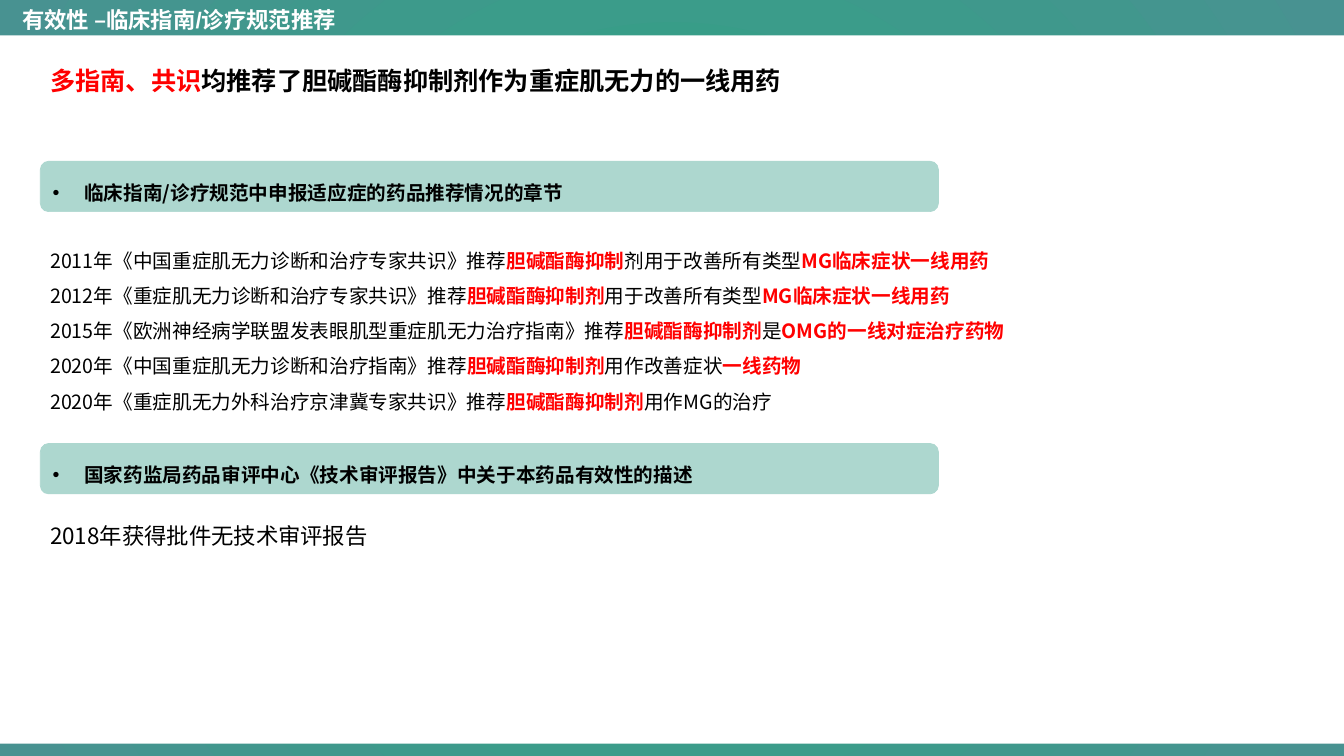
"""Builds the slide on guideline recommendations for cholinesterase inhibitors."""
from dataclasses import dataclass

from lxml import etree
from pptx import Presentation
from pptx.dml.color import RGBColor
from pptx.enum import shapes, text
from pptx.oxml import ns, parse_xml
from pptx.util import Pt

BLACK = RGBColor(0, 0, 0)
WHITE = RGBColor(255, 255, 255)
RED = RGBColor(255, 0, 0)
MINT = RGBColor(0xAD, 0xD7, 0xCF)
CJK_FONT = "Noto Sans CJK SC"
MARGIN = 28.8

BACKDROP = f"""<a:gradFill {ns.nsdecls('a')} rotWithShape="1"><a:gsLst>
<a:gs pos="0"><a:srgbClr val="2DA582"><a:alpha val="80000"/></a:srgbClr></a:gs>
<a:gs pos="100000"><a:srgbClr val="489291"/></a:gs></a:gsLst>
<a:path path="circle"><a:fillToRect l="50000" t="50000" r="50000" b="50000"/></a:path>
</a:gradFill>"""


@dataclass
class Passage:
    """Lines of text at a height; parts between bars are emphasised."""
    top: float
    width: float
    height: float
    lines: list[str]
    size: float
    spacing: float
    bold: bool = False
    align: text.PP_ALIGN = text.PP_ALIGN.JUSTIFY


@dataclass
class Section:
    """A mint band with a bulleted heading."""
    top: float
    heading: str


PASSAGES = [
    Passage(165.6, 767.5, 131.8, [
        "2011年《中国重症肌无力诊断和治疗专家共识》推荐|胆碱酯酶抑制|剂用于改善所有类型|MG临床症状一线用药",
        "2012年《重症肌无力诊断和治疗专家共识》推荐|胆碱酯酶抑制剂|用于改善所有类型|MG临床症状一线用药",
        "2015年《欧洲神经病学联盟发表眼肌型重症肌无力治疗指南》推荐|胆碱酯酶抑制剂|是|OMG的一线对症治疗药物",
        "2020年《中国重症肌无力诊断和治疗指南》推荐|胆碱酯酶抑制剂|用作改善症状|一线药物",
        "2020年《重症肌无力外科治疗京津冀专家共识》推荐|胆碱酯酶抑制剂|用作MG的治疗",
    ], 14, 1.5),
    Passage(350.6, 902, 40.3, ["2018年获得批件无技术审评报告"], 16, 2),
    Passage(32.4, 902, 36, ["|多指南、共识|均推荐了胆碱酯酶抑制剂作为重症肌无力的一线用药"],
            18, 1.5, True, text.PP_ALIGN.LEFT),
]
SECTIONS = [
    Section(115.2, "临床指南/诊疗规范中申报适应症的药品推荐情况的章节"),
    Section(316.8, "国家药监局药品审评中心《技术审评报告》中关于本药品有效性的描述"),
]


def write(paragraph, wording: str, *, size: float, spacing: float = 1,
          bold: bool = False, color: RGBColor = BLACK, font: str = CJK_FONT,
          align: text.PP_ALIGN = text.PP_ALIGN.JUSTIFY) -> None:
    """Fill a paragraph, turning parts between bars red and bold."""
    paragraph.alignment = align
    paragraph.line_spacing = spacing
    for index, part in enumerate(wording.split("|")):
        if not part:
            continue
        emphasised = index % 2 == 1
        run = paragraph.add_run()
        run.text = part
        run.font.size = Pt(size)
        run.font.bold = bold or emphasised
        run.font.color.rgb = RED if emphasised else color
        run.font.name = font
        east_asian = etree.SubElement(run.font._element, ns.qn("a:ea"))
        east_asian.set("typeface", CJK_FONT)


def add_bullet(paragraph) -> None:
    """Give a paragraph a round bullet with a hanging indent."""
    properties = paragraph._p.get_or_add_pPr()
    properties.set("marL", str(Pt(22.5)))
    properties.set("indent", str(-Pt(22.5)))
    etree.SubElement(properties, ns.qn("a:buFont")).set("typeface", "Arial")
    etree.SubElement(properties, ns.qn("a:buChar")).set("char", "•")


def paint_backdrop(slide) -> None:
    """Set the radial green background."""
    slide.background.fill.solid()
    backdrop = slide._element.find(".//" + ns.qn("p:bgPr"))
    backdrop.replace(backdrop[0], parse_xml(BACKDROP))


def add_page(slide) -> None:
    """Lay the white page between the green strips, behind the title."""
    page = slide.shapes.add_shape(
        shapes.MSO_SHAPE.RECTANGLE, Pt(0), Pt(25.2), Pt(960), Pt(506))
    page.shadow.inherit = False
    page.fill.solid()
    page.fill.fore_color.rgb = WHITE
    page.line.fill.background()
    slide.shapes._spTree.insert(2, page._element)


def add_title(slide, wording: str) -> None:
    """Place the title in the top strip."""
    title = slide.shapes.title
    title.left, title.top = Pt(8.6), Pt(0.7)
    title.width, title.height = Pt(942.5), Pt(27)
    frame = title.text_frame
    frame.auto_size = text.MSO_AUTO_SIZE.NONE
    frame.vertical_anchor = text.MSO_ANCHOR.TOP
    write(frame.paragraphs[0], wording, size=16, bold=True, color=WHITE,
          font="Arial", align=text.PP_ALIGN.LEFT)


def add_passage(slide, passage: Passage) -> None:
    """Draw a text box with one paragraph a line."""
    box = slide.shapes.add_textbox(
        Pt(MARGIN), Pt(passage.top), Pt(passage.width), Pt(passage.height))
    frame = box.text_frame
    frame.word_wrap = True
    frame.auto_size = text.MSO_AUTO_SIZE.SHAPE_TO_FIT_TEXT
    for index, line in enumerate(passage.lines):
        paragraph = frame.add_paragraph() if index else frame.paragraphs[0]
        write(paragraph, line, size=passage.size, spacing=passage.spacing,
              bold=passage.bold, align=passage.align)


def add_section(slide, section: Section) -> None:
    """Draw a rounded band with its heading."""
    band = slide.shapes.add_shape(
        shapes.MSO_SHAPE.ROUNDED_RECTANGLE,
        Pt(MARGIN), Pt(section.top), Pt(641.5), Pt(36))
    band.shadow.inherit = False
    band.fill.solid()
    band.fill.fore_color.rgb = MINT
    band.line.color.rgb = MINT
    band.line.width = Pt(0.5)
    band.text_frame.word_wrap = True
    band.text_frame.vertical_anchor = text.MSO_ANCHOR.MIDDLE
    heading = band.text_frame.paragraphs[0]
    add_bullet(heading)
    write(heading, section.heading, size=14, spacing=1.5, bold=True)


def main() -> None:
    """Build and save the slide."""
    deck = Presentation()
    deck.slide_width, deck.slide_height = Pt(960), Pt(540)
    slide = deck.slides.add_slide(deck.slide_layouts.get_by_name("Title Only"))
    paint_backdrop(slide)
    add_page(slide)
    add_title(slide, "有效性 –临床指南/诊疗规范推荐")
    for passage in PASSAGES:
        add_passage(slide, passage)
    for section in SECTIONS:
        add_section(slide, section)
    deck.save("out.pptx")


if __name__ == "__main__":
    main()
